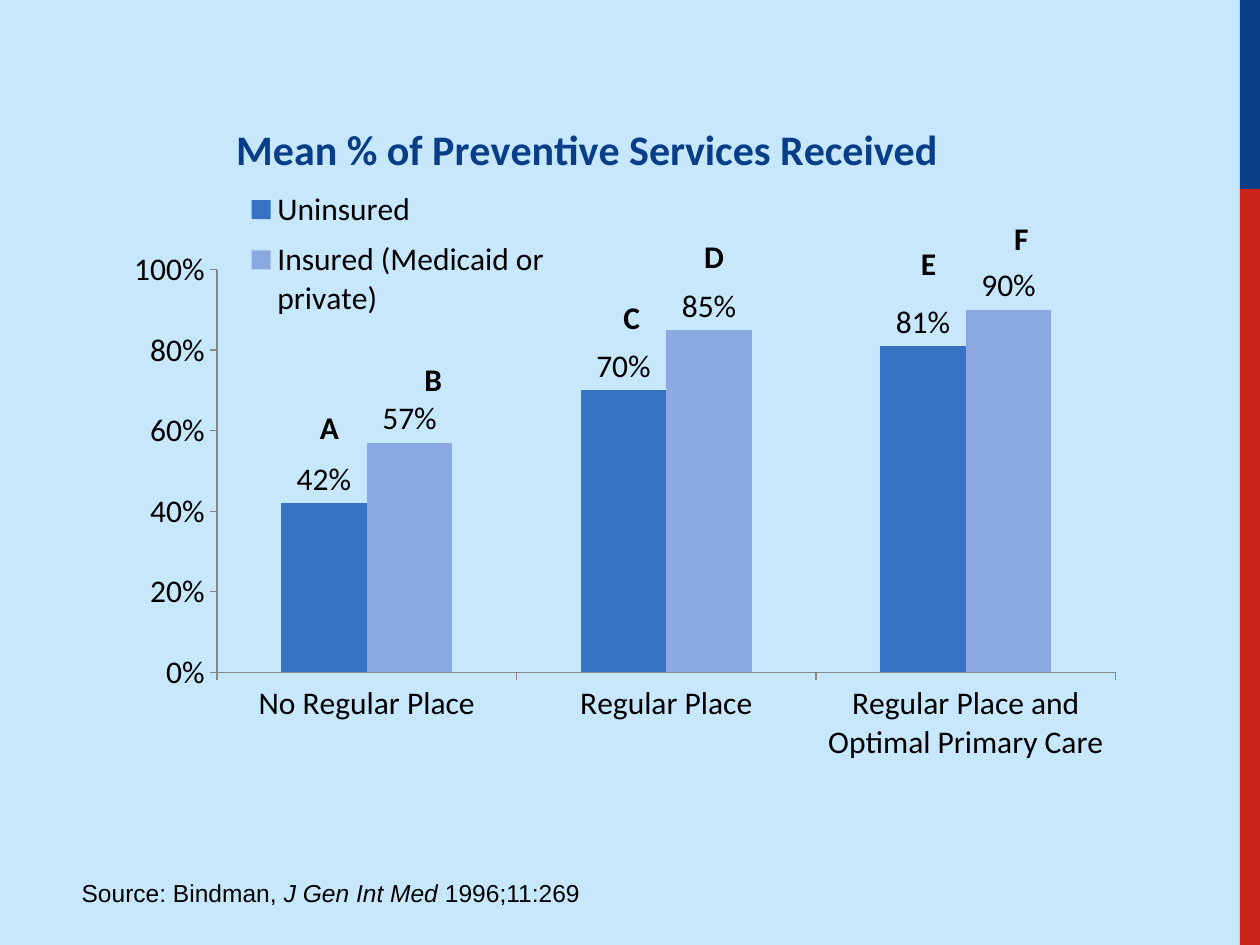
from lxml import etree
from pptx import Presentation
from pptx.chart.data import CategoryChartData
from pptx.dml.color import RGBColor
from pptx.enum.chart import XL_CHART_TYPE, XL_LABEL_POSITION, XL_LEGEND_POSITION, XL_TICK_MARK
from pptx.enum.shapes import MSO_SHAPE
from pptx.oxml.ns import qn
from pptx.util import Inches, Pt

RECTANGLE = MSO_SHAPE.RECTANGLE
COLUMNS = XL_CHART_TYPE.COLUMN_CLUSTERED
OUTSIDE_END = XL_LABEL_POSITION.OUTSIDE_END
LEGEND_RIGHT = XL_LEGEND_POSITION.RIGHT
TICK_OUTSIDE = XL_TICK_MARK.OUTSIDE
INK, NAVY, AXIS_GREY = "000000", "073E87", "868686"


def style(font, size, color=INK, name="Calibri", bold=False):
    font.size, font.name, font.bold = Pt(size), name, bold
    font.color.rgb = RGBColor.from_string(color)


def place(element, index, inner=False, **shares):
    for old in element.findall(qn("c:layout")):
        element.remove(old)
    layout = etree.Element(qn("c:layout"))
    element.insert(index, layout)
    manual = etree.SubElement(layout, qn("c:manualLayout"))
    if inner:
        etree.SubElement(manual, qn("c:layoutTarget")).set("val", "inner")
    for mode in ("xMode", "yMode"):
        etree.SubElement(manual, qn("c:" + mode)).set("val", "edge")
    for side, share in shares.items():
        etree.SubElement(manual, qn("c:" + side)).set("val", str(share))


deck = Presentation()
deck.slide_width, deck.slide_height = Inches(10), Inches(7.5)
WIDTH, HEIGHT = deck.slide_width, deck.slide_height
slide = deck.slides.add_slide(deck.slide_layouts[6])

field_width = Inches(9.84)
stripe_width = WIDTH - field_width
navy_height = HEIGHT // 5
for left, top, width, height, color in (
    (0, 0, field_width, HEIGHT, "C6E7FC"),
    (field_width, 0, stripe_width, navy_height, NAVY),
    (field_width, navy_height, stripe_width, HEIGHT - navy_height, "CC241B"),
):
    panel = slide.shapes.add_shape(RECTANGLE, left, top, width, height)
    panel.shadow.inherit = False
    panel.fill.solid()
    panel.fill.fore_color.rgb = RGBColor.from_string(color)
    panel.line.fill.background()

services = CategoryChartData(number_format="0%")
services.categories = ["No Regular Place", "Regular Place", "Regular Place and Optimal Primary Care"]
services.add_series("Uninsured", (0.42, 0.7, 0.81))
services.add_series("Insured (Medicaid or private)", (0.57, 0.85, 0.9))
chart = slide.shapes.add_chart(
    COLUMNS, Inches(0.64), Inches(0.62), Inches(8.39), Inches(5.69), services
).chart
style(chart.font, 18)

chart.has_title = True
heading = chart.chart_title.text_frame
heading.text = "Mean % of Preventive Services Received"
style(heading.paragraphs[0].runs[0].font, 24, NAVY, bold=True)
chart.chart_title.include_in_layout = False

chart.has_legend = True
chart.legend.position = LEGEND_RIGHT
chart.legend.include_in_layout = False
style(chart.legend.font, 18)

plot = chart.plots[0]
plot.gap_width, plot.overlap, plot.vary_by_categories = 150, 0, False
for group, color in zip(plot.series, ("3673C3", "8BA9E0")):
    group.format.fill.solid()
    group.format.fill.fore_color.rgb = RGBColor.from_string(color)
    labels = group.data_labels
    labels.show_value = True
    labels.number_format, labels.number_format_is_linked = "0%", False
    labels.position = OUTSIDE_END
    style(labels.font, 18)

for axis in (chart.category_axis, chart.value_axis):
    axis.has_major_gridlines = False
    axis.major_tick_mark = TICK_OUTSIDE
    axis.format.line.color.rgb = RGBColor.from_string(AXIS_GREY)
    style(axis.tick_labels.font, 18)
percent = chart.value_axis
percent.minimum_scale, percent.maximum_scale, percent.major_unit = 0, 1, 0.2
percent.tick_labels.number_format = "0%"
percent.tick_labels.number_format_is_linked = False

chart_root = chart._chartSpace.chart
place(chart_root.find(qn("c:title")), 1, x=0.14, y=0.05)
place(chart_root.plotArea, 0, inner=True, x=0.129, y=0.267, w=0.85, h=0.562)
place(chart_root.find(qn("c:legend")), 1, x=0.15, y=0.14, w=0.3, h=0.21)

source = slide.shapes.add_textbox(Inches(0.55), Inches(6.92), Inches(4.37), Inches(0.34))
source.text_frame.word_wrap = True
citation = source.text_frame.paragraphs[0]
for words, italic in (("Source: Bindman, ", False), ("J Gen Int Med", True), (" 1996;11:269", False)):
    part = citation.add_run()
    part.text = words
    style(part.font, 14, name="Arial")
    part.font.italic = italic

for letter, left, top in (
    ("A", 2.44, 3.19), ("B", 3.27, 2.81), ("C", 4.85, 2.32),
    ("D", 5.49, 1.83), ("E", 7.21, 1.89), ("F", 7.95, 1.69),
):
    marker = slide.shapes.add_textbox(Inches(left), Inches(top), Inches(0.5), Inches(0.4))
    marker.text_frame.word_wrap = True
    marker.text_frame.text = letter
    style(marker.text_frame.paragraphs[0].runs[0].font, 18, bold=True)

deck.save("out.pptx")
